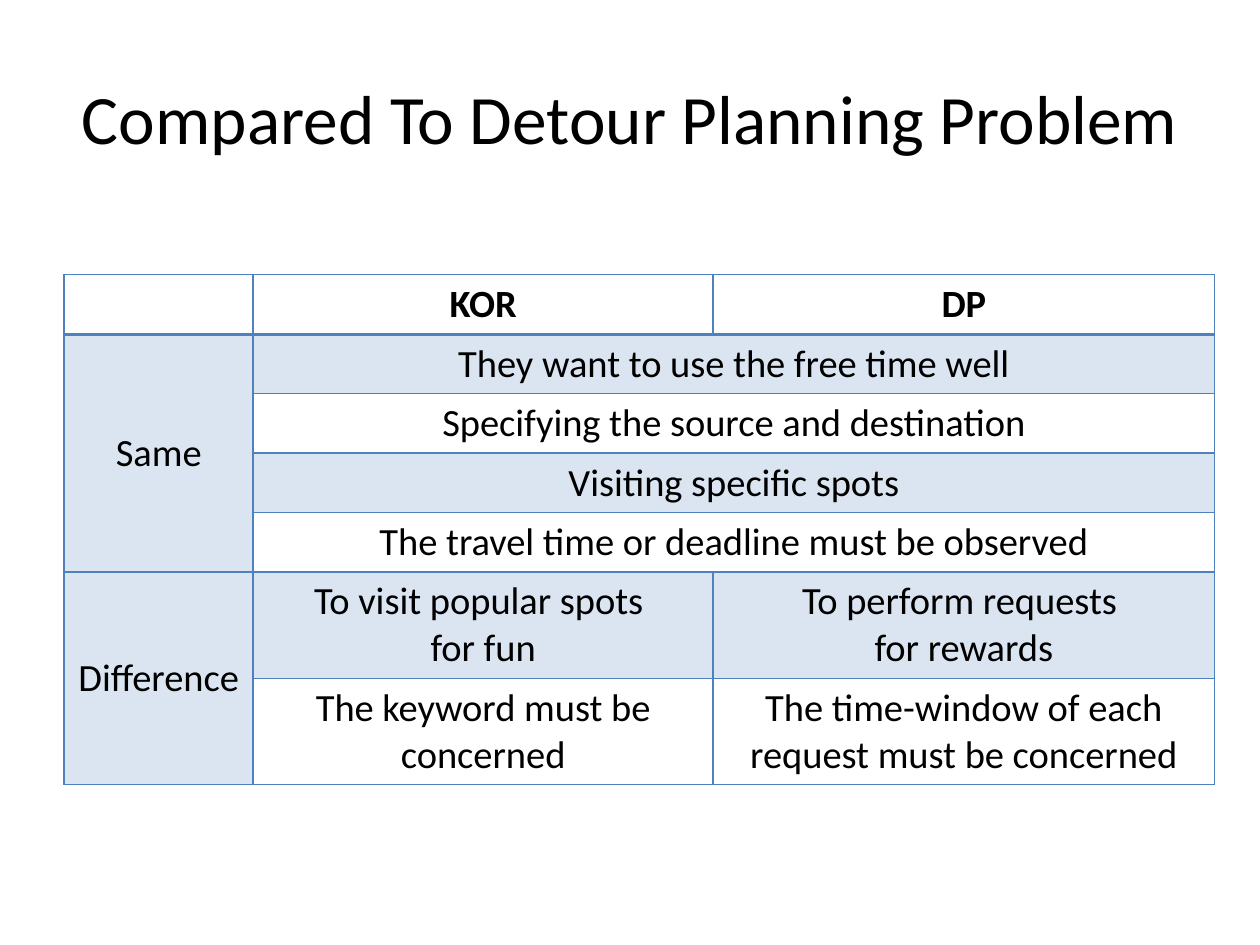
from lxml import etree
from pptx import Presentation
from pptx.dml.color import RGBColor
from pptx.enum.text import MSO_ANCHOR, MSO_AUTO_SIZE, PP_ALIGN
from pptx.oxml.ns import qn
from pptx.util import Inches, Pt

CENTER = PP_ALIGN.CENTER
MIDDLE = MSO_ANCHOR.MIDDLE
NO_AUTOFIT = MSO_AUTO_SIZE.NONE
BLACK = RGBColor(0x00, 0x00, 0x00)
BLUE = RGBColor(0x4F, 0x81, 0xBD)
TINT_PERCENT = 20
TITLE_ONLY = 5

COLUMN_WIDTHS = [1.5, 3.65, 3.98]
ROW_HEIGHTS = [0.47] * 5 + [0.84] * 2
COMPARISON = [
    ["", "KOR", "DP"],
    ["Same", "They want to use the free time well", ""],
    ["", "Specifying the source and destination", ""],
    ["", "Visiting specific spots", ""],
    ["", "The travel time or deadline must be observed", ""],
    ["Difference", "To visit popular spots \nfor fun", "To perform requests \nfor rewards"],
    ["", "The keyword must be concerned", "The time-window of each request must be concerned"],
]
MERGES = [((1, 0), (4, 0)), ((5, 0), (6, 0))] + [((row, 1), (row, 2)) for row in range(1, 5)]


class ComparisonSlide:
    """Holds the text style and the current slide, and adds its elements."""

    def __init__(self, presentation):
        self.slide = presentation.slides.add_slide(presentation.slide_layouts[TITLE_ONLY])
        self.font_style = {"name": "Calibri", "bold": False}

    def set_text(self, frame, text, size, **changes):
        frame.text = text
        style = {**self.font_style, "size": Pt(size), **changes}
        for paragraph in frame.paragraphs:
            paragraph.alignment = CENTER
            for item in (paragraph, *paragraph.runs):
                for name, value in style.items():
                    setattr(item.font, name, value)
                item.font.color.rgb = BLACK

    def title(self, text, left, top, width, height):
        heading = self.slide.shapes.title
        place = {"left": left, "top": top, "width": width, "height": height}
        for name, value in place.items():
            setattr(heading, name, Inches(value))
        frame = heading.text_frame
        frame.auto_size = NO_AUTOFIT
        frame.word_wrap = True
        frame.vertical_anchor = MIDDLE
        self.set_text(frame, text, 39.6)

    def border(self, cell, side, width):
        properties = cell._tc.get_or_add_tcPr()
        line = etree.SubElement(properties, qn(f"a:ln{side}"), w=str(Pt(width)))
        solid = etree.SubElement(line, qn("a:solidFill"))
        etree.SubElement(solid, qn("a:srgbClr"), val=str(BLUE))

    def tint(self, cell):
        cell.fill.solid()
        cell.fill.fore_color.rgb = BLUE
        color = cell._tc.tcPr.find(f"{qn('a:solidFill')}/{qn('a:srgbClr')}")
        etree.SubElement(color, qn("a:alpha"), val=str(TINT_PERCENT * 1000))

    def table(self, rows, merges, left, top):
        frame = self.slide.shapes.add_table(
            len(rows), len(COLUMN_WIDTHS), Inches(left), Inches(top),
            Inches(sum(COLUMN_WIDTHS)), Inches(sum(ROW_HEIGHTS)))
        grid = frame.table
        grid.first_row = grid.horz_banding = False
        for column, width in zip(grid.columns, COLUMN_WIDTHS):
            column.width = Inches(width)
        for row, height in zip(grid.rows, ROW_HEIGHTS):
            row.height = Inches(height)
        for start, end in merges:
            grid.cell(*start).merge(grid.cell(*end))
        for r, texts in enumerate(rows):
            for c, text in enumerate(texts):
                cell = grid.cell(r, c)
                cell.vertical_anchor = MIDDLE
                self.set_text(cell.text_frame, text, 22, bold=r == 0)
                for side in "LRTB":
                    header_edge = (r, side) in [(0, "B"), (1, "T")]
                    self.border(cell, side, 2 if header_edge else 1)
                if r > 0 and (c == 0 or r % 2):
                    self.tint(cell)
                else:
                    cell.fill.background()


def main():
    presentation = Presentation()
    presentation.slide_width = Inches(10)
    presentation.slide_height = Inches(7.5)
    comparison = ComparisonSlide(presentation)
    comparison.title("Compared To Detour Planning Problem", 0.5, 0.3, 9, 1.25)
    comparison.table(COMPARISON, MERGES, 0.51, 2.18)
    presentation.save("out.pptx")


if __name__ == "__main__":
    main()
